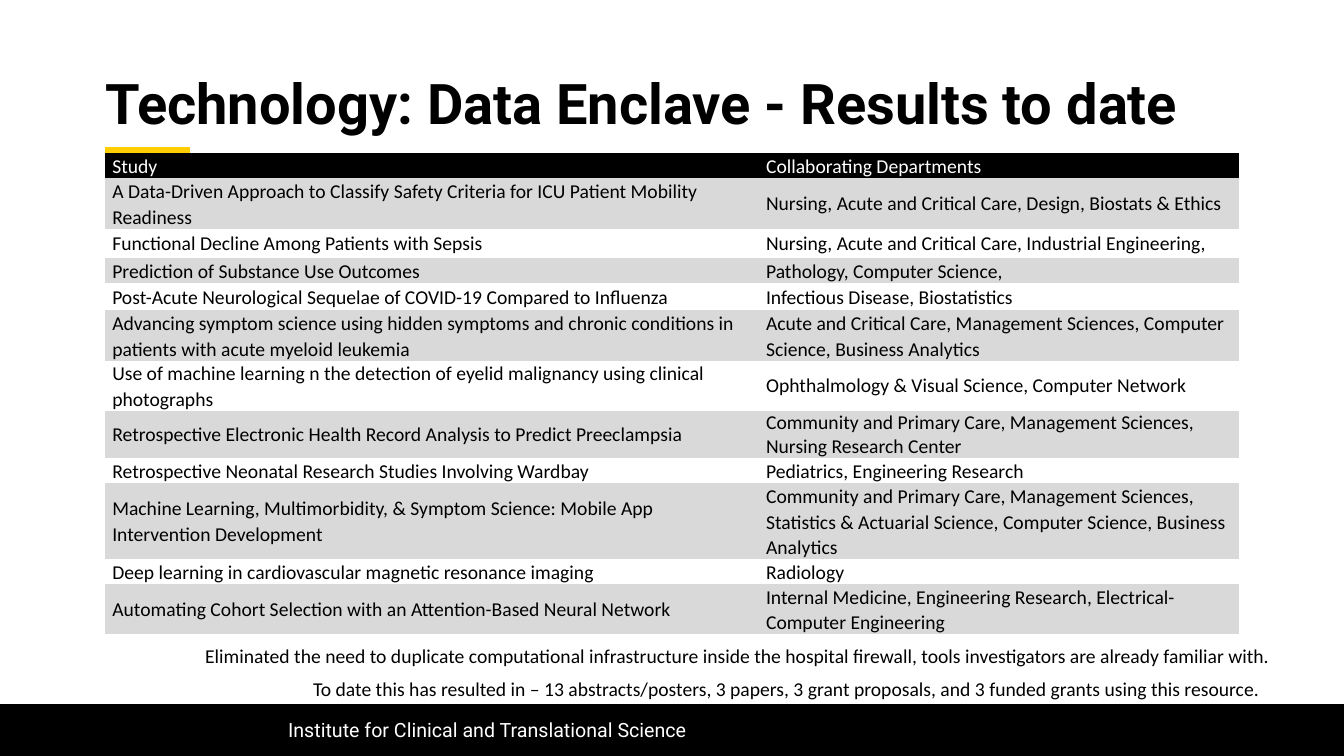
from pptx import Presentation
from pptx.util import Pt
from pptx.dml.color import RGBColor
from pptx.enum import shapes, text
from pptx.oxml import ns
from lxml import etree


def hue(code):
    return RGBColor.from_string(code)


def write(frame, words, size, font, code, space=1.0, bold=False):
    frame.word_wrap = True
    para = frame.paragraphs[0]
    para.line_spacing = space
    run = para.add_run()
    run.text = words
    run.font.size = Pt(size)
    run.font.name = font
    run.font.bold = bold
    run.font.color.rgb = hue(code)


deck = Presentation()
deck.slide_width, deck.slide_height = Pt(960), Pt(540)
slide = deck.slides.add_slide(deck.slide_layouts[6])
parts = slide.shapes

# Gold accent line
gold = parts.add_connector(shapes.MSO_CONNECTOR.STRAIGHT,
                           Pt(75), Pt(107.3), Pt(135.5), Pt(107.3))
gold.line.color.rgb = hue("FFCD00")
gold.line.width = Pt(5)
etree.SubElement(gold._element.spPr, ns.qn("a:effectLst"))

# Footer band
band = parts.add_shape(shapes.MSO_SHAPE.RECTANGLE, 0, Pt(503), Pt(960), Pt(37))
band.shadow.inherit = False
band.fill.solid()
band.fill.fore_color.rgb = hue("000000")
band.line.fill.background()

# Title
title = parts.add_textbox(Pt(75), Pt(42), Pt(810), Pt(68)).text_frame
title.margin_left = title.margin_right = 0
title.margin_top = title.margin_bottom = 0
title.vertical_anchor = text.MSO_ANCHOR.MIDDLE
write(title, "Technology: Data Enclave - Results to date", 40, "Roboto",
      "000000", 0.9, True)

# Footer text
foot = parts.add_textbox(Pt(198.7), Pt(507), Pt(684), Pt(29)).text_frame
foot.vertical_anchor = text.MSO_ANCHOR.MIDDLE
write(foot, "Institute for Clinical and Translational Science", 14, "Roboto", "FFFFFF")

# Study table: row height, study, departments
rows = [
    (11.5, "Study", "Collaborating Departments"),
    (22.3, "A Data-Driven Approach to Classify Safety Criteria for ICU Patient Mobility Readiness",
     "Nursing, Acute and Critical Care, Design, Biostats & Ethics"),
    (20.9, "Functional Decline Among Patients with Sepsis",
     "Nursing, Acute and Critical Care, Industrial Engineering,"),
    (11.5, "Prediction of Substance Use Outcomes", "Pathology, Computer Science,"),
    (19.4, "Post-Acute Neurological Sequelae of COVID-19 Compared to Influenza",
     "Infectious Disease, Biostatistics"),
    (22.3, "Advancing symptom science using hidden symptoms and chronic conditions in "
     "patients with acute myeloid leukemia",
     "Acute and Critical Care, Management Sciences, Computer Science, Business Analytics"),
    (22.3, "Use of machine learning n the detection of eyelid malignancy using clinical photographs",
     "Ophthalmology & Visual Science, Computer Network"),
    (21.6, "Retrospective Electronic Health Record Analysis to Predict Preeclampsia",
     "Community and Primary Care, Management Sciences, Nursing Research Center"),
    (13, "Retrospective Neonatal Research Studies Involving Wardbay",
     "Pediatrics, Engineering Research"),
    (33.8, "Machine Learning, Multimorbidity, & Symptom Science: Mobile App Intervention Development",
     "Community and Primary Care, Management Sciences, Statistics & Actuarial Science, "
     "Computer Science, Business Analytics"),
    (13.7, "Deep learning in cardiovascular magnetic resonance imaging", "Radiology"),
    (22.3, "Automating Cohort Selection with an Attention-Based Neural Network",
     "Internal Medicine, Engineering Research, Electrical-Computer Engineering"),
]
tight = {(6, 1), (7, 0), (7, 1)}  # cells with single line spacing

frame = parts.add_table(len(rows), 2, Pt(75), Pt(109.3), Pt(810), Pt(336))
for style in frame._element.iter(ns.qn("a:tableStyleId")):
    style.text = "{2D5ABB26-0587-4C30-8999-92F81FD0307C}"  # no style, no grid
grid = frame.table
grid.columns[0].width, grid.columns[1].width = Pt(467), Pt(343)

for r, (high, *words) in enumerate(rows):
    grid.rows[r].height = Pt(high)
    back = "000000" if r == 0 else "D9D9D9" if r % 2 else "FFFFFF"
    for c, word in enumerate(words):
        cell = grid.cell(r, c)
        cell.margin_left = cell.margin_right = Pt(5.2)
        cell.margin_top = cell.margin_bottom = 0
        cell.vertical_anchor = text.MSO_ANCHOR.MIDDLE
        cell.fill.solid()
        cell.fill.fore_color.rgb = hue(back)
        write(cell.text_frame, word, 14, "Calibri",
              "000000" if r else "FFFFFF", 1.0 if (r, c) in tight else 1.07)

# Closing notes
notes = [
    (216.5, 480.3, 710, "To date this has resulted in – 13 abstracts/posters, 3 papers, "
     "3 grant proposals, and 3 funded grants using this resource."),
    (139.4, 456.3, 783.5, "Eliminated the need to duplicate computational infrastructure inside "
     "the hospital firewall, tools investigators are already familiar with."),
]
for left, top, wide, words in notes:
    box = parts.add_textbox(Pt(left), Pt(top), Pt(wide), Pt(24.2))
    write(box.text_frame, words, 14, "Calibri", "000000")

deck.save("out.pptx")
